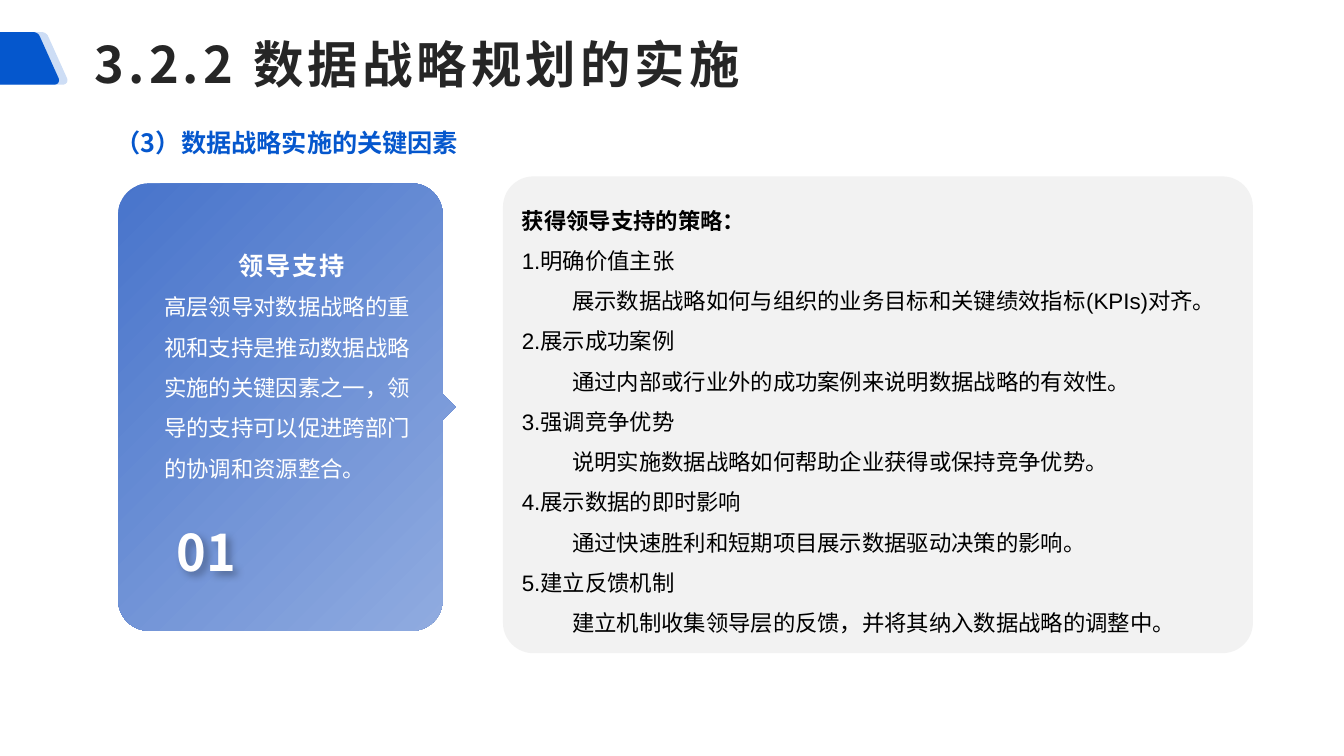
from lxml import etree
from pptx import Presentation
from pptx import util as u
from pptx.dml.color import RGBColor
from pptx.enum import shapes, text
from pptx.oxml.ns import qn

TITLE = "3.2.2 数据战略规划的实施"
SUBTITLE = "（3）数据战略实施的关键因素"
CARD_HEADING = "领导支持"
CARD_BODY = "高层领导对数据战略的重视和支持是推动数据战略实施的关键因素之一，领导的支持可以促进跨部门的协调和资源整合。"
CARD_NUMBER = "01"
PANEL_HEADING = "获得领导支持的策略："
STRATEGIES = [
    ("明确价值主张", "展示数据战略如何与组织的业务目标和关键绩效指标(KPIs)对齐。"),
    ("展示成功案例", "通过内部或行业外的成功案例来说明数据战略的有效性。"),
    ("强调竞争优势", "说明实施数据战略如何帮助企业获得或保持竞争优势。"),
    ("展示数据的即时影响", "通过快速胜利和短期项目展示数据驱动决策的影响。"),
    ("建立反馈机制", "建立机制收集领导层的反馈，并将其纳入数据战略的调整中。"),
]
COLORS = {
    "blue": "0557CD", "pale": "CDDDF5", "card": "4874CB", "card_end": "91ACE0",
    "panel": "F2F2F2", "title": "262626", "white": "FFFFFF", "black": "000000",
}
CJK = "Noto Sans CJK SC"
CARD = (84.4, 131, 241.1, 319.6)
CARD_RADIUS = 22
POINTER = 9.3
TAB_TOP, TAB_BOTTOM = 23, 60.5
TABS = [("pale", 6), ("blue", 0)]


def color(name):
    return RGBColor.from_string(COLORS[name])


def toward(start, end, distance):
    length = ((end[0] - start[0]) ** 2 + (end[1] - start[1]) ** 2) ** 0.5
    return [a + (b - a) * distance / length for a, b in zip(start, end)]


def rounded_outline(corners, steps=12):
    outline = []
    for index, (x, y, radius) in enumerate(corners):
        corner = (x, y)
        if not radius:
            outline.append(corner)
            continue
        following = corners[(index + 1) % len(corners)][:2]
        before, after = corners[index - 1][:2], following
        a, d = toward(corner, before, radius), toward(corner, after, radius)
        b, c = toward(corner, before, radius * 0.45), toward(corner, after, radius * 0.45)
        for step in range(steps + 1):
            t = step / steps
            weights = ((1 - t) ** 3, 3 * t * (1 - t) ** 2, 3 * t * t * (1 - t), t ** 3)
            outline.append(tuple(sum(w * p[axis] for w, p in zip(weights, (a, b, c, d)))
                                 for axis in (0, 1)))
    return outline


def add_outline(page, corners):
    points = [(u.Pt(x), u.Pt(y)) for x, y in rounded_outline(corners)]
    builder = page.shapes.build_freeform(*points[0])
    builder.add_line_segments(points[1:], close=True)
    shape = builder.convert_to_shape()
    shape.shadow.inherit = False
    shape.line.fill.background()
    return shape


def set_frame(box, insets, anchor, wrap=True):
    frame = box.text_frame
    frame.word_wrap = wrap
    frame.auto_size = text.MSO_AUTO_SIZE.NONE
    frame.vertical_anchor = anchor
    (frame.margin_left, frame.margin_top,
     frame.margin_right, frame.margin_bottom) = [u.Pt(inset) for inset in insets]
    return frame


def write(para, words, size, tint, bold=False, font=CJK, align=text.PP_ALIGN.LEFT,
          line=1.5, tracking=0, indent=0):
    para.text = words
    para.alignment = align
    para.line_spacing = line
    para.font.size = u.Pt(size)
    para.font.bold = bold
    para.font.name = font
    para.font.color.rgb = color(tint)
    properties = para._p.get_or_add_pPr()
    properties.set("marL", "0")
    properties.set("indent", str(u.Pt(indent)))
    defaults = properties.find(qn("a:defRPr"))
    defaults.set("spc", str(round(tracking * 100)))
    east_asian = etree.Element(qn("a:ea"), typeface=CJK)
    defaults.find(qn("a:latin")).addnext(east_asian)


def add_text_shadow(box):
    effects = etree.SubElement(box._element.spPr, qn("a:effectLst"))
    shadow = etree.SubElement(effects, qn("a:outerShdw"), blurRad=str(u.Pt(6)),
                              dist=str(u.Pt(4)), dir="2700000", algn="tl", rotWithShape="0")
    tint = etree.SubElement(shadow, qn("a:srgbClr"), val=COLORS["black"])
    etree.SubElement(tint, qn("a:alpha"), val="30000")


def add_tabs(page):
    for tint, shift in TABS:
        tab = add_outline(page, [(0, TAB_TOP, 0), (27.1 + shift, TAB_TOP, 3),
                                 (44 + shift, TAB_BOTTOM, 5.5), (0, TAB_BOTTOM, 0)])
        tab.fill.solid()
        tab.fill.fore_color.rgb = color(tint)


def add_card(page):
    left, top, width, height = CARD
    right, bottom, middle = left + width, top + height, top + height / 2
    edge = right - POINTER
    card = add_outline(page, [
        (left, top, CARD_RADIUS), (edge, top, CARD_RADIUS),
        (edge, middle - POINTER, 0), (right, middle, 0), (edge, middle + POINTER, 0),
        (edge, bottom, CARD_RADIUS), (left, bottom, CARD_RADIUS)])
    card.fill.gradient()
    card.fill.gradient_angle = 315
    for stop, tint, position in zip(card.fill.gradient_stops, ("card", "card_end"), (0, 1)):
        stop.color.rgb = color(tint)
        stop.position = position
    frame = set_frame(card, (33, 36.7, 26, 64.8), text.MSO_ANCHOR.TOP)
    write(frame.paragraphs[0], CARD_HEADING, 18, "white", True,
          align=text.PP_ALIGN.CENTER, tracking=1.3)
    write(frame.add_paragraph(), CARD_BODY, 16, "white")

    number = page.shapes.add_textbox(u.Pt(113.8), u.Pt(366.5), u.Pt(67.7), u.Pt(54.7))
    frame = set_frame(number, (0, 0, 0, 0), text.MSO_ANCHOR.MIDDLE, wrap=False)
    write(frame.paragraphs[0], CARD_NUMBER, 36, "white", True,
          align=text.PP_ALIGN.CENTER, line=1.0)
    add_text_shadow(number)


def add_panel(page):
    panel = page.shapes.add_shape(shapes.MSO_SHAPE.ROUNDED_RECTANGLE, u.Pt(359.3), u.Pt(126),
                                  u.Pt(535.7), u.Pt(340.6))
    panel.adjustments[0] = 0.064
    panel.shadow.inherit = False
    panel.fill.solid()
    panel.fill.fore_color.rgb = color("panel")
    panel.line.fill.background()
    frame = set_frame(panel, (7.2, 3.6, 7.2, 3.6), text.MSO_ANCHOR.MIDDLE)
    write(frame.paragraphs[0], PANEL_HEADING, 16, "black", True, "Arial")
    for number, (name, detail) in enumerate(STRATEGIES, 1):
        write(frame.add_paragraph(), f"{number}.{name}", 16, "black", font="Arial")
        write(frame.add_paragraph(), detail, 16, "black", font="Arial", indent=36)


def add_headings(page):
    title = page.shapes.title
    title.left, title.top, title.width, title.height = (
        u.Pt(62.6), u.Pt(18.7), u.Pt(815.8), u.Pt(53.3))
    frame = set_frame(title, (5, 2.2, 5, 2.2), text.MSO_ANCHOR.MIDDLE)
    write(frame.paragraphs[0], TITLE, 36, "title", True, line=1.0, tracking=3)

    subtitle = page.shapes.add_textbox(u.Pt(39.6), u.Pt(76.3), u.Pt(480.2), u.Pt(39.6))
    frame = set_frame(subtitle, (7.2, 3.6, 7.2, 3.6), text.MSO_ANCHOR.TOP)
    write(frame.paragraphs[0], SUBTITLE, 18, "blue", True,
          align=text.PP_ALIGN.JUSTIFY, indent=36)


def main():
    deck = Presentation()
    deck.slide_width, deck.slide_height = u.Pt(960), u.Pt(540)
    page = deck.slides.add_slide(deck.slide_layouts[5])
    add_tabs(page)
    add_card(page)
    add_panel(page)
    add_headings(page)
    deck.save("out.pptx")


if __name__ == "__main__":
    main()
